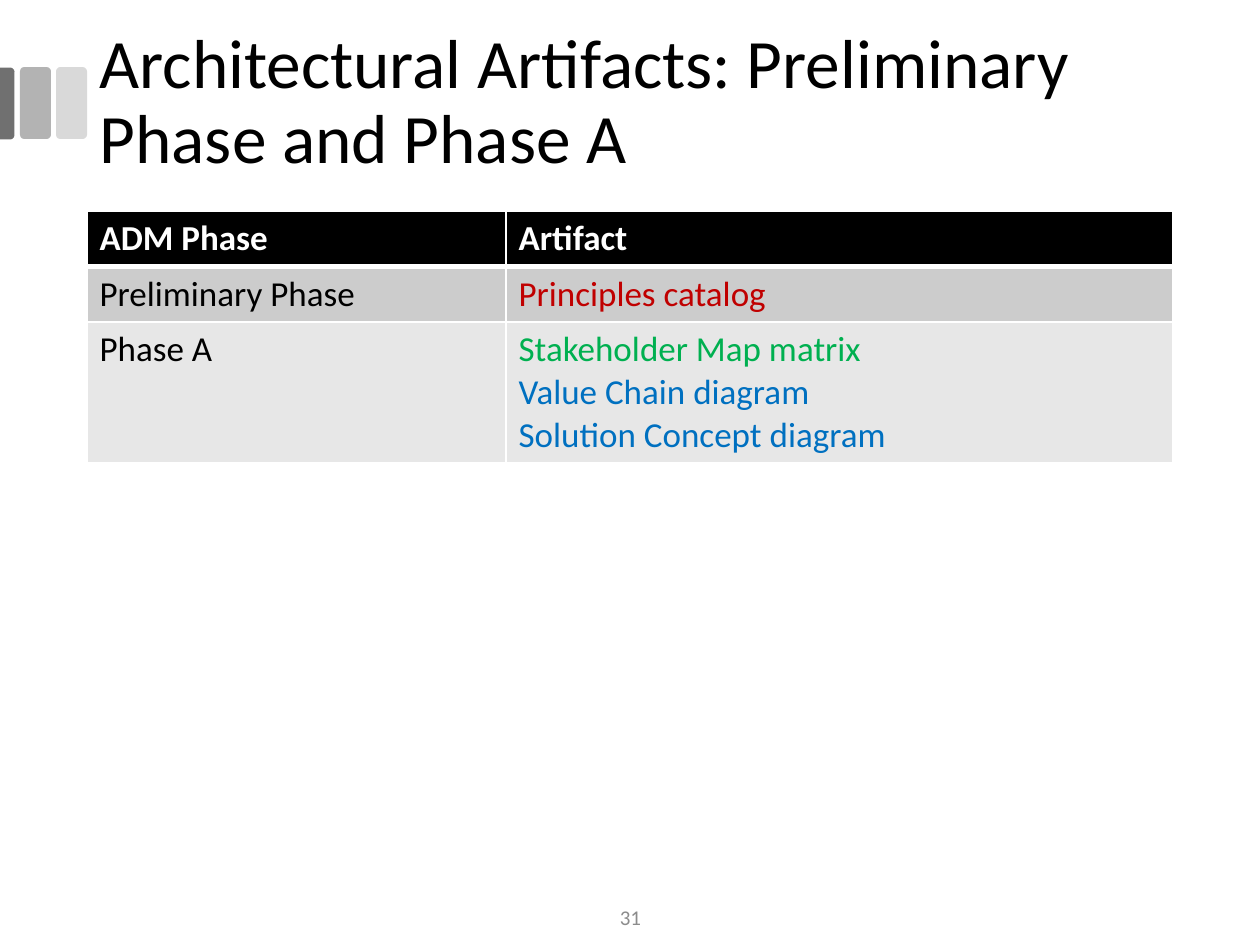
from lxml.etree import SubElement
from pptx import Presentation
from pptx.dml.color import RGBColor
from pptx.enum.shapes import MSO_SHAPE
from pptx.enum.text import MSO_ANCHOR, MSO_AUTO_SIZE, PP_ALIGN
from pptx.oxml.ns import qn
from pptx.util import Pt

EMU_PER_PX = 914400 // 126
COLORS = {
    "black": "000000", "white": "FFFFFF", "number": "8C8C8C",
    "tab_dark": "707070", "tab_mid": "B3B3B3", "tab_light": "D9D9D9",
    "row_dark": "CCCCCC", "row_light": "E7E7E7",
    "catalog": "C00000", "matrix": "00B050", "diagram": "0070C0",
}


def px(*lengths):
    return [length * EMU_PER_PX for length in lengths]


def rgb(name):
    return RGBColor.from_string(COLORS[name])


class SlideBuilder:
    font_name = "Calibri"

    def __init__(self, slide):
        self.slide = slide

    def set_text(self, paragraph, text, size, color, bold=False):
        paragraph.text = text
        font = paragraph.font
        formats = {"name": self.font_name, "size": Pt(size), "bold": bold}
        for key, value in formats.items():
            setattr(font, key, value)
        font.color.rgb = rgb(color)

    def title(self, text, box, size):
        heading = self.slide.shapes.title
        for key, value in zip(("left", "top", "width", "height"), px(*box)):
            setattr(heading, key, value)
        frame = heading.text_frame
        formats = {"word_wrap": True, "auto_size": MSO_AUTO_SIZE.NONE,
                   "vertical_anchor": MSO_ANCHOR.MIDDLE}
        for key, value in formats.items():
            setattr(frame, key, value)
        paragraph = frame.paragraphs[0]
        self.set_text(paragraph, text, size, "black")
        paragraph.alignment = PP_ALIGN.LEFT
        paragraph.line_spacing = 0.9

    def tab(self, preset, box, color, adjustments, rotation=0):
        tab = self.slide.shapes.add_shape(preset, *px(*box))
        tab.shadow.inherit = False
        tab.rotation = rotation
        tab.fill.solid()
        tab.fill.fore_color.rgb = rgb(color)
        tab.line.fill.background()
        for index, value in enumerate(adjustments):
            tab.adjustments[index] = value

    def label(self, text, box, size, color):
        frame = self.slide.shapes.add_textbox(*px(*box)).text_frame
        frame.word_wrap = True
        frame.vertical_anchor = MSO_ANCHOR.MIDDLE
        self.set_text(frame.paragraphs[0], text, size, color)
        frame.paragraphs[0].alignment = PP_ALIGN.CENTER

    def cell_borders(self, cell, widths):
        # Borders precede the fill in the cell properties
        properties = cell._tc.get_or_add_tcPr()
        for side, width in widths.items():
            line = SubElement(properties, qn(f"a:ln{side}"), w=str(Pt(width)))
            fill = SubElement(line, qn("a:solidFill"))
            SubElement(fill, qn("a:srgbClr"), val=COLORS["white"])

    def table(self, left, top, column_widths, row_heights, rows, size):
        box = px(left, top, sum(column_widths), sum(row_heights))
        table = self.slide.shapes.add_table(
            len(rows), len(column_widths), *box).table
        for column, width in zip(table.columns, px(*column_widths)):
            column.width = width
        for row, height in zip(table.rows, px(*row_heights)):
            row.height = height
        for r, (fill, cells) in enumerate(rows):
            widths = {"L": 1, "R": 1, "T": 3 if r == 1 else 1,
                      "B": 3 if r == 0 else 1}
            for c, lines in enumerate(cells):
                cell = table.cell(r, c)
                self.cell_borders(cell, widths)
                cell.fill.solid()
                cell.fill.fore_color.rgb = rgb(fill)
                frame = cell.text_frame
                for index, (text, color) in enumerate(lines):
                    paragraph = frame.add_paragraph() if index else frame.paragraphs[0]
                    self.set_text(paragraph, text, size, color, bold=r == 0)


def main():
    deck = Presentation()
    deck.slide_width, deck.slide_height = px(1260, 945)
    builder = SlideBuilder(deck.slides.add_slide(deck.slide_layouts[5]))

    # Tabs at the left edge
    for left, color in ((56, "tab_light"), (20, "tab_mid")):
        builder.tab(MSO_SHAPE.ROUNDED_RECTANGLE, (left, 67, 31, 72), color, [0.14])
    builder.tab(MSO_SHAPE.ROUND_2_SAME_RECTANGLE, (-29, 96, 72, 15),
                "tab_dark", [0.29, 0], rotation=90)

    # Title
    builder.title("Architectural Artifacts: Preliminary Phase and Phase A",
                  (87, 21, 1086, 165), 39.6)

    # Artifacts by phase
    artifact_rows = [
        ("black", [[("ADM Phase", "white")], [("Artifact", "white")]]),
        ("row_dark", [[("Preliminary Phase", "black")],
                      [("Principles catalog", "catalog")]]),
        ("row_light", [[("Phase A", "black")],
                       [("Stakeholder Map matrix", "matrix"),
                        ("Value Chain diagram", "diagram"),
                        ("Solution Concept diagram", "diagram")]]),
    ]
    builder.table(87, 211, (419, 667), (55, 55, 141), artifact_rows, 20)

    # Slide number
    builder.label("31", (489, 892, 283, 50), 12, "number")

    deck.save("out.pptx")


if __name__ == "__main__":
    main()
